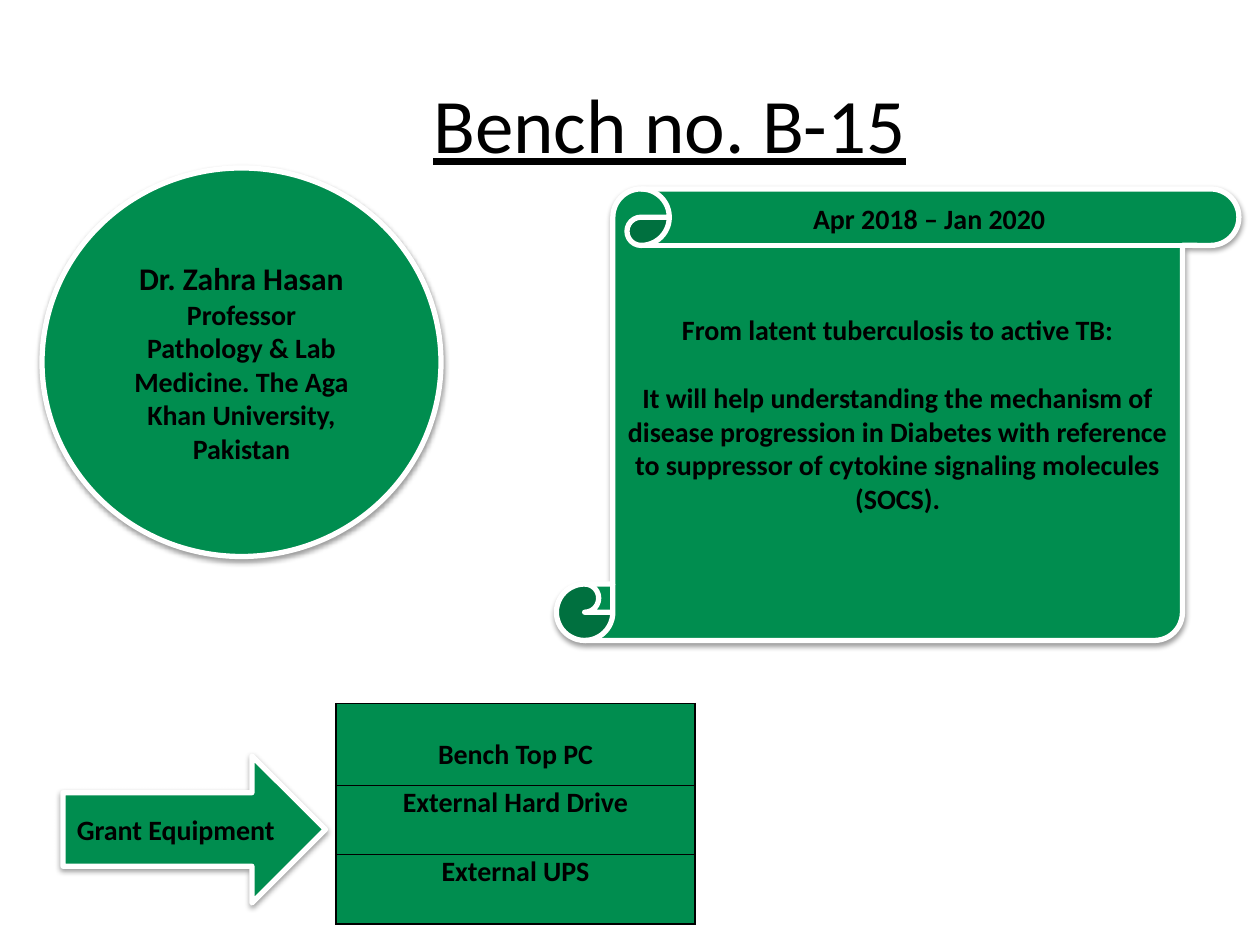
from dataclasses import dataclass

from lxml.etree import SubElement
from pptx import Presentation
from pptx.dml.color import RGBColor
from pptx.enum.shapes import MSO_SHAPE
from pptx.enum.text import MSO_ANCHOR, PP_ALIGN
from pptx.oxml.ns import qn
from pptx.util import Pt

GREEN, BLACK, WHITE = "008D4F", "000000", "FFFFFF"
FONT = "Calibri"
BODY_SIZE = 16


@dataclass
class Panel:
    kind: MSO_SHAPE
    box: tuple[float, float, float, float]
    paragraphs: list[list[tuple[str, float]]]  # each run is (text, size)
    framed: bool = True  # white outline and soft shadow
    gap: float = 0  # space before every paragraph but the first
    bottom: float = 3.6


PANELS = [
    Panel(MSO_SHAPE.OVAL, (24, 96, 228, 222),
          [[("Dr. Zahra Hasan ", 18), ("Professor", BODY_SIZE)],
           [("Pathology & Lab Medicine. The Aga Khan University, Pakistan", BODY_SIZE)]]),
    Panel(MSO_SHAPE.VERTICAL_SCROLL, (318, 108, 390, 258),
          [[("From latent tuberculosis to active TB:", BODY_SIZE)],
           [("It will help understanding the mechanism of disease progression in Diabetes "
             "with reference to suppressor of cytokine signaling molecules (SOCS).", BODY_SIZE)]],
          gap=19.5, bottom=20.6),
    Panel(MSO_SHAPE.RECTANGLE, (402, 111.6, 258, 26.6),
          [[("Apr 2018 – Jan 2020", BODY_SIZE)]], framed=False),
    Panel(MSO_SHAPE.RIGHT_ARROW, (36, 432, 150, 84),
          [[("Grant Equipment", BODY_SIZE)]]),
]
EQUIPMENT = [("Bench Top PC", 46.8), ("External Hard Drive", 39.6), ("External UPS", 39.6)]


def rgb(color: str) -> RGBColor:
    return RGBColor.from_string(color)


def paint(target, color: str) -> None:
    target.fill.solid()
    target.fill.fore_color.rgb = rgb(color)


def style_run(r, size: float, bold: bool = True) -> None:
    r.font.name, r.font.size, r.font.bold = FONT, Pt(size), bold
    r.font.color.rgb = rgb(BLACK)


def add_shadow(s) -> None:
    effects = s._element.spPr.find(qn("a:effectLst"))
    shadow = SubElement(effects, qn("a:outerShdw"), blurRad=str(Pt(3.15)),
                        dist=str(Pt(1.57)), dir="5400000", rotWithShape="0")
    color = SubElement(shadow, qn("a:srgbClr"), val=BLACK)
    SubElement(color, qn("a:alpha"), val="38000")


def add_panel(slide, panel: Panel) -> None:
    s = slide.shapes.add_shape(panel.kind, *map(Pt, panel.box))
    s.shadow.inherit = False
    paint(s, GREEN)
    if panel.framed:
        s.line.color.rgb, s.line.width = rgb(WHITE), Pt(3)
        add_shadow(s)
    else:
        s.line.fill.background()
    tf = s.text_frame
    tf.word_wrap = True
    tf.margin_bottom = Pt(panel.bottom)
    tf.vertical_anchor = MSO_ANCHOR.MIDDLE if panel.framed else MSO_ANCHOR.TOP
    for i, runs in enumerate(panel.paragraphs):
        p = tf.add_paragraph() if i else tf.paragraphs[0]
        p.alignment = PP_ALIGN.CENTER
        if i:
            p.space_before = Pt(panel.gap)
        for text, size in runs:
            r = p.add_run()
            r.text = text
            style_run(r, size)


def add_borders(cell) -> None:
    tc_pr = cell._tc.get_or_add_tcPr()
    for i, side in enumerate(("lnL", "lnR", "lnT", "lnB")):
        ln = tc_pr.makeelement(qn(f"a:{side}"), {"w": str(Pt(1))})
        SubElement(SubElement(ln, qn("a:solidFill")), qn("a:srgbClr"), val=BLACK)
        tc_pr.insert(i, ln)  # borders come before the fill


def add_equipment_table(slide) -> None:
    heights = [height for _, height in EQUIPMENT]
    frame = slide.shapes.add_table(len(EQUIPMENT), 1, Pt(192), Pt(402), Pt(205.2), Pt(sum(heights)))
    table = frame.table
    table.first_row = table.horz_banding = False
    for i, (name, height) in enumerate(EQUIPMENT):
        table.rows[i].height = Pt(height)
        cell = table.cell(i, 0)
        paint(cell, GREEN)
        add_borders(cell)
        cell.margin_left = cell.margin_right = Pt(5)
        cell.margin_top = Pt(0 if i else 19.5)
        cell.margin_bottom = Pt(0)
        cell.text_frame.text = name
        p = cell.text_frame.paragraphs[0]
        p.alignment = PP_ALIGN.CENTER
        style_run(p.runs[0], BODY_SIZE)


def set_title(slide, text: str) -> None:
    s = slide.shapes.title
    s.left, s.top, s.width, s.height = map(Pt, (240.5, 40.3, 360, 80))
    tf = s.text_frame
    tf.text = text
    tf.vertical_anchor = MSO_ANCHOR.TOP
    p = tf.paragraphs[0]
    p.alignment = PP_ALIGN.LEFT
    style_run(p.runs[0], 44, bold=False)
    p.runs[0].font.underline = True


def main() -> None:
    prs = Presentation()
    prs.slide_width, prs.slide_height = Pt(720), Pt(540)
    slide = prs.slides.add_slide(prs.slide_layouts[5])
    set_title(slide, "Bench no. B-15")
    for panel in PANELS:
        add_panel(slide, panel)
    add_equipment_table(slide)
    prs.save("out.pptx")


if __name__ == "__main__":
    main()
